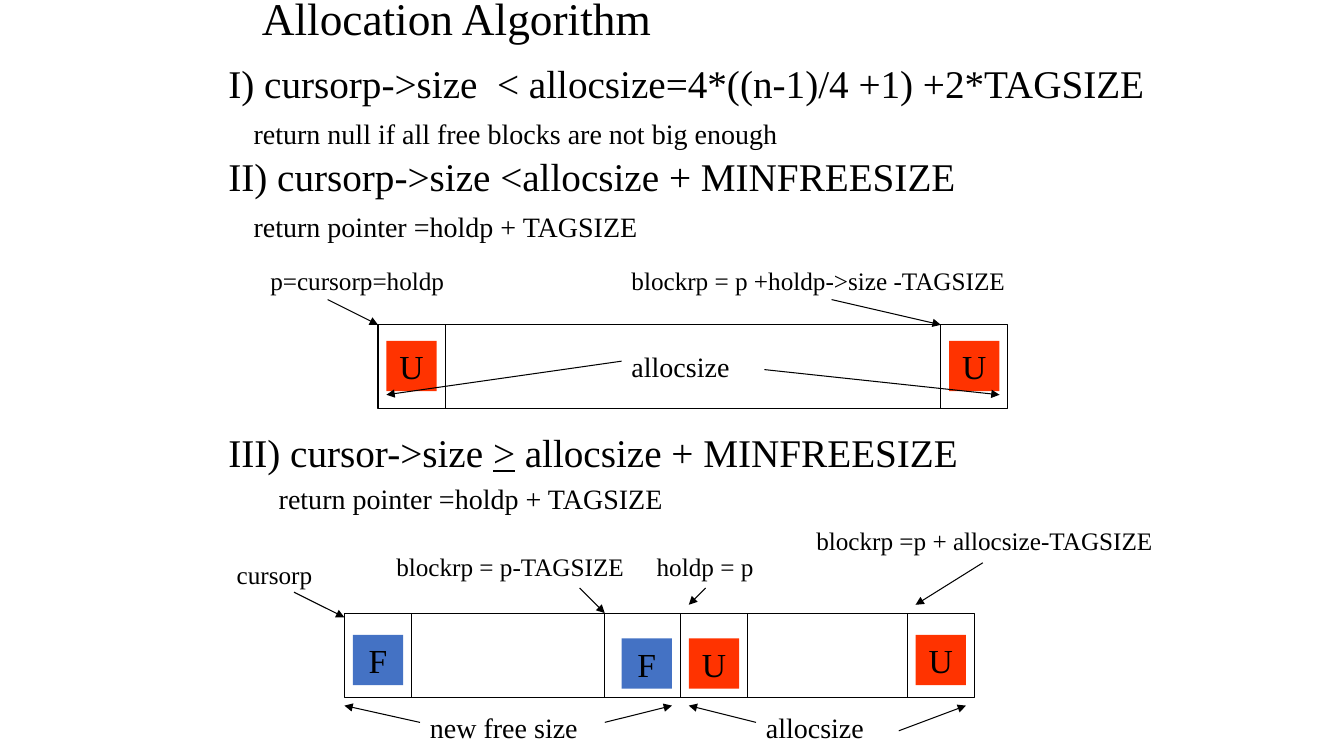
import pptx
import pptx.util
import pptx.dml.color
import pptx.enum.shapes
import pptx.enum.text
import pptx.oxml.ns
import lxml.etree

Pt = pptx.util.Pt
COLORS = {"ink": "000000", "paper": "FFFFFF", "used": "FF3300", "free": "4472C4"}


class AllocationSlide:
    """Style and drawing methods for one slide, with lengths in points."""

    font_name = "Times New Roman"
    line_width = 0.75
    bar_height = 60
    marker_side = 36

    def __init__(self, slide):
        self.slide = slide

    def color(self, name):
        return pptx.dml.color.RGBColor.from_string(COLORS[name])

    def style(self, paragraph, size):
        paragraph.font.name = self.font_name
        paragraph.font.size = Pt(size)
        paragraph.font.color.rgb = self.color("ink")

    def frame(self, left, top, width, height):
        box = self.slide.shapes.add_textbox(Pt(left), Pt(top), Pt(width), Pt(height))
        box.text_frame.word_wrap = True
        return box.text_frame

    def label(self, text, left, top, width, height=29, size=18):
        frame = self.frame(left, top, width, height)
        frame.text = text
        self.style(frame.paragraphs[0], size)
        return frame

    def title(self, text, left, top, width, height):
        frame = self.label(text, left, top, width, height, 32.4)
        frame.vertical_anchor = pptx.enum.text.MSO_ANCHOR.MIDDLE
        frame.paragraphs[0].line_spacing = 0.9

    def outline(self, entries, left, top, width, height):
        frame = self.frame(left, top, width, height)
        for position, (parts, size, before, indent) in enumerate(entries):
            paragraph = frame.add_paragraph() if position else frame.paragraphs[0]
            for part in parts:
                run = paragraph.add_run()
                run.text = part
                if part == ">":
                    run.font.underline = True
            self.style(paragraph, size)
            paragraph.line_spacing = 0.7
            paragraph.space_before = Pt(before)
            paragraph._p.get_or_add_pPr().set("marL", str(Pt(indent)))

    def rectangle(self, left, top, width, height, fill):
        shape = self.slide.shapes.add_shape(
            pptx.enum.shapes.MSO_SHAPE.RECTANGLE, Pt(left), Pt(top), Pt(width), Pt(height))
        shape.shadow.inherit = False
        shape.fill.solid()
        shape.fill.fore_color.rgb = self.color(fill)
        return shape

    def block(self, left, top, width, dividers):
        bar = self.rectangle(left, top, width, self.bar_height, "paper")
        bar.line.color.rgb = self.color("ink")
        bar.line.width = Pt(self.line_width)
        for x in dividers:
            self.line((x, top), (x, top + self.bar_height))

    def marker(self, letter, left, top):
        fill = "used" if letter == "U" else "free"
        tag = self.rectangle(left, top, self.marker_side, self.marker_side, fill)
        tag.line.fill.background()
        tag.text_frame.text = letter
        tag.text_frame.vertical_anchor = pptx.enum.text.MSO_ANCHOR.MIDDLE
        paragraph = tag.text_frame.paragraphs[0]
        paragraph.alignment = pptx.enum.text.PP_ALIGN.CENTER
        self.style(paragraph, 24)

    def line(self, start, end):
        connector = self.slide.shapes.add_connector(
            pptx.enum.shapes.MSO_CONNECTOR.STRAIGHT, *map(Pt, start + end))
        connector.line.color.rgb = self.color("ink")
        connector.line.width = Pt(self.line_width)
        lxml.etree.SubElement(connector._element.spPr, pptx.oxml.ns.qn("a:effectLst"))
        return connector

    def arrow(self, start, end):
        outline = self.line(start, end).line._get_or_add_ln()
        lxml.etree.SubElement(outline, pptx.oxml.ns.qn("a:tailEnd"), type="triangle")


def main():
    presentation = pptx.Presentation()
    presentation.slide_width, presentation.slide_height = Pt(960), Pt(540)
    page = AllocationSlide(presentation.slides.add_slide(presentation.slide_layouts[6]))

    page.title("Allocation Algorithm", 180, 0, 612, 30)
    page.outline([
        (["I) cursorp->size  < allocsize=4*((n-1)/4 +1) +2*TAGSIZE"], 28, 10, 0),
        (["return null if all free blocks are not big enough"], 20, 14.6, 18),
        (["II) cursorp->size <allocsize + MINFREESIZE"], 28, 11.7, 0),
        (["return pointer =holdp + TAGSIZE"], 20, 14.6, 18),
        (["III) cursor->size ", ">", " allocsize + MINFREESIZE"], 28, 141.7, 0),
        (["return pointer =holdp + TAGSIZE"], 20, 12.3, 36),
    ], 156, 48, 672, 342)

    page.block(270, 232, 450, [318, 672])
    page.block(246, 438, 450, [294, 432, 486, 534, 648])

    for letter, left, top in [
        ("U", 276, 243.5), ("U", 678, 243.5),
        ("F", 252, 453.5), ("F", 444, 456), ("U", 492, 456), ("U", 654, 453.5),
    ]:
        page.marker(letter, left, top)

    for pointer, left, top, width in [
        ("p=cursorp=holdp", 186, 186, 288),
        ("blockrp = p +holdp->size -TAGSIZE", 444, 186, 360),
        ("cursorp", 162, 396, 288),
        ("blockrp = p-TAGSIZE", 276, 390, 186),
        ("holdp = p", 462, 390, 108),
        ("blockrp =p + allocsize-TAGSIZE", 576, 372, 264),
    ]:
        page.label(pointer, left, top, width)

    for extent, left, top, width in [
        ("allocsize", 444, 246, 108),
        ("new free size", 300, 504, 162),
        ("allocsize", 540, 504, 108),
    ]:
        page.label(extent, left, top, width, 31, 20)

    for start, end in [
        ((234, 214), (270, 232)), ((594, 214), (672, 232)),
        ((444, 258), (276, 282)), ((546, 264), (714, 282)),
        ((210, 423), (246, 441)), ((414, 420), (432, 438)),
        ((504, 420), (492, 432)), ((702, 402), (654, 432)),
        ((300, 516), (246, 504)), ((432, 516), (480, 504)),
        ((540, 516), (492, 504)), ((642, 522), (690, 504)),
    ]:
        page.arrow(start, end)

    presentation.save("out.pptx")


if __name__ == "__main__":
    main()
